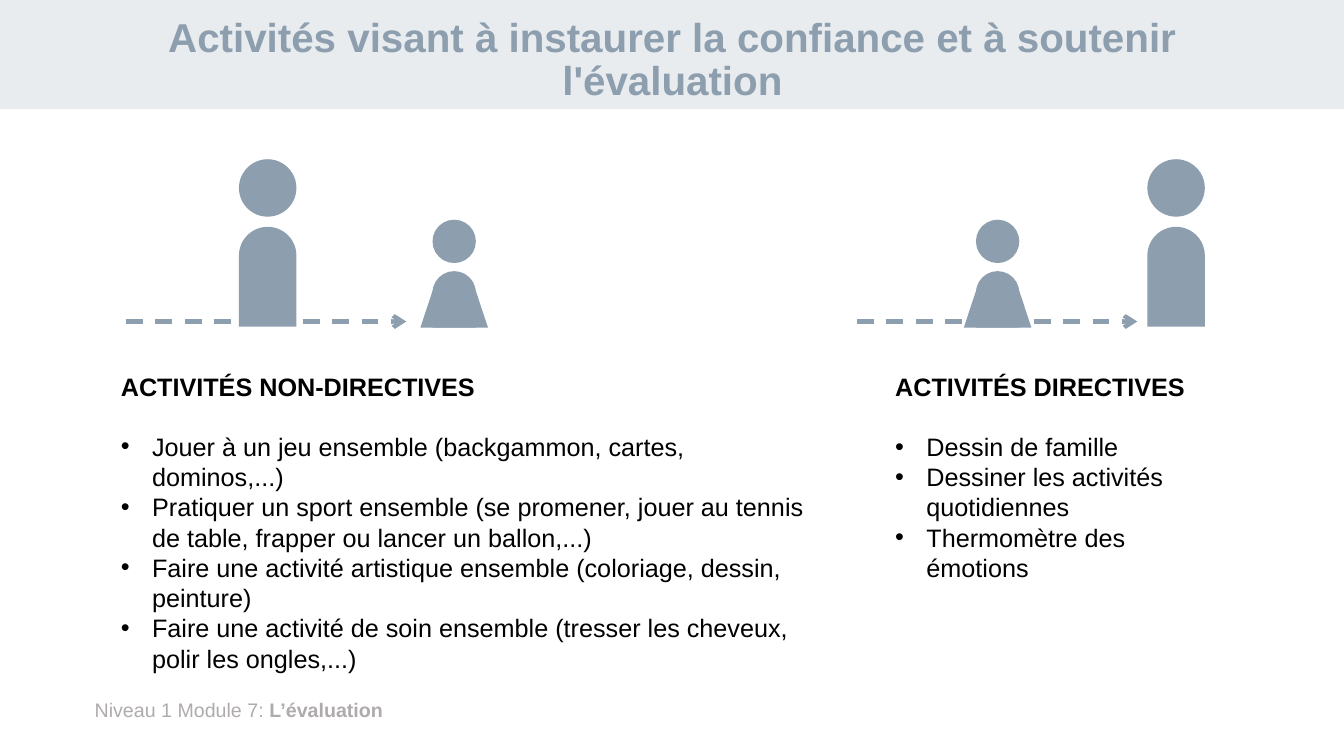
from lxml import etree
from pptx import Presentation
from pptx.dml.color import RGBColor
from pptx.enum.dml import MSO_LINE
from pptx.enum.shapes import MSO_CONNECTOR, MSO_SHAPE
from pptx.enum.text import MSO_ANCHOR, PP_ALIGN
from pptx.oxml.ns import qn
from pptx.util import Inches, Pt

COLORS = {"band": "E8ECEF", "slate": "8D9EAE", "footer": "AFABAB", "text": "000000"}

presentation = Presentation()
presentation.slide_width = Inches(13.33)
presentation.slide_height = Inches(7.5)
slide = presentation.slides.add_slide(presentation.slide_layouts[6])


def add_figure_part(kind, left, top, width, height, color="slate", adjustments=()):
    shape = slide.shapes.add_shape(kind, Inches(left), Inches(top), Inches(width), Inches(height))
    shape.shadow.inherit = False
    shape.fill.solid()
    shape.fill.fore_color.rgb = RGBColor.from_string(COLORS[color])
    shape.line.fill.background()
    for index, value in enumerate(adjustments):
        shape.adjustments[index] = value


def add_run(paragraph, text, size, color, bold=False):
    run = paragraph.add_run()
    run.text = text
    run.font.name = "Arial"
    run.font.size = Pt(size)
    run.font.bold = bold
    run.font.color.rgb = RGBColor.from_string(COLORS[color])


add_figure_part(MSO_SHAPE.RECTANGLE, 0, 0, 13.33, 1.08, "band")

footer = slide.shapes.add_textbox(Inches(0.84), Inches(6.87), Inches(11.35), Inches(0.34))
footer.text_frame.word_wrap = True
paragraph = footer.text_frame.paragraphs[0]
add_run(paragraph, "Niveau 1 Module 7: ", 14, "footer")
add_run(paragraph, "L’évaluation", 14, "footer", True)

title = slide.shapes.add_textbox(Inches(0.92), Inches(0.13), Inches(11.5), Inches(0.95))
title.text_frame.word_wrap = True
title.text_frame.vertical_anchor = MSO_ANCHOR.MIDDLE
paragraph = title.text_frame.paragraphs[0]
paragraph.alignment = PP_ALIGN.CENTER
paragraph.line_spacing = 0.9
add_run(paragraph, "Activités visant à instaurer la confiance et à soutenir l'évaluation", 28.8, "slate", True)

activity_columns = [
    (1.1, 7.08, 2.83, "ACTIVITÉS NON-DIRECTIVES", [
        "Jouer à un jeu ensemble (backgammon, cartes, dominos,...)",
        "Pratiquer un sport ensemble (se promener, jouer au tennis de table, frapper ou lancer un ballon,...)",
        "Faire une activité artistique ensemble (coloriage, dessin, peinture)",
        "Faire une activité de soin ensemble (tresser les cheveux, polir les ongles,...)",
    ]),
    (8.78, 3.51, 1.62, "ACTIVITÉS DIRECTIVES", [
        "Dessin de famille",
        "Dessiner les activités quotidiennes",
        "Thermomètre des émotions",
    ]),
]
for left, width, height, heading, activities in activity_columns:
    column = slide.shapes.add_textbox(Inches(left), Inches(3.63), Inches(width), Inches(height))
    column.text_frame.word_wrap = True
    paragraph = column.text_frame.paragraphs[0]
    paragraph.space_after = Pt(21.5)
    add_run(paragraph, heading, 18, "text", True)
    for activity in activities:
        paragraph = column.text_frame.add_paragraph()
        properties = paragraph._p.get_or_add_pPr()
        properties.set("marL", str(Inches(0.31)))
        properties.set("indent", str(-Inches(0.31)))
        etree.SubElement(properties, qn("a:buFont"), typeface="Arial")
        etree.SubElement(properties, qn("a:buChar"), char="•")
        add_run(paragraph, activity, 18, "text")

for adult_left, child_left, arrow_left in [(2.37, 4.17, 1.25), (11.38, 9.56, 8.5)]:
    add_figure_part(MSO_SHAPE.ROUND_2_SAME_RECTANGLE, child_left + 0.12, 2.69, 0.43, 0.56, adjustments=(0.5, 0))
    add_figure_part(MSO_SHAPE.OVAL, child_left + 0.12, 2.18, 0.43, 0.43)
    add_figure_part(MSO_SHAPE.TRAPEZOID, child_left, 2.86, 0.67, 0.39, adjustments=(0.33,))
    add_figure_part(MSO_SHAPE.OVAL, adult_left, 1.58, 0.57, 0.57)
    add_figure_part(MSO_SHAPE.ROUND_2_SAME_RECTANGLE, adult_left, 2.25, 0.57, 0.99, adjustments=(0.5, 0))

    arrow = slide.shapes.add_connector(
        MSO_CONNECTOR.STRAIGHT, Inches(arrow_left), Inches(3.19), Inches(arrow_left + 2.78), Inches(3.19))
    arrow.line.color.rgb = RGBColor.from_string(COLORS["slate"])
    arrow.line.width = Pt(3)
    arrow.line.dash_style = MSO_LINE.DASH
    etree.SubElement(arrow.line._get_or_add_ln(), qn("a:tailEnd"), type="arrow")
    etree.SubElement(arrow._element.spPr, qn("a:effectLst"))

presentation.save("out.pptx")
